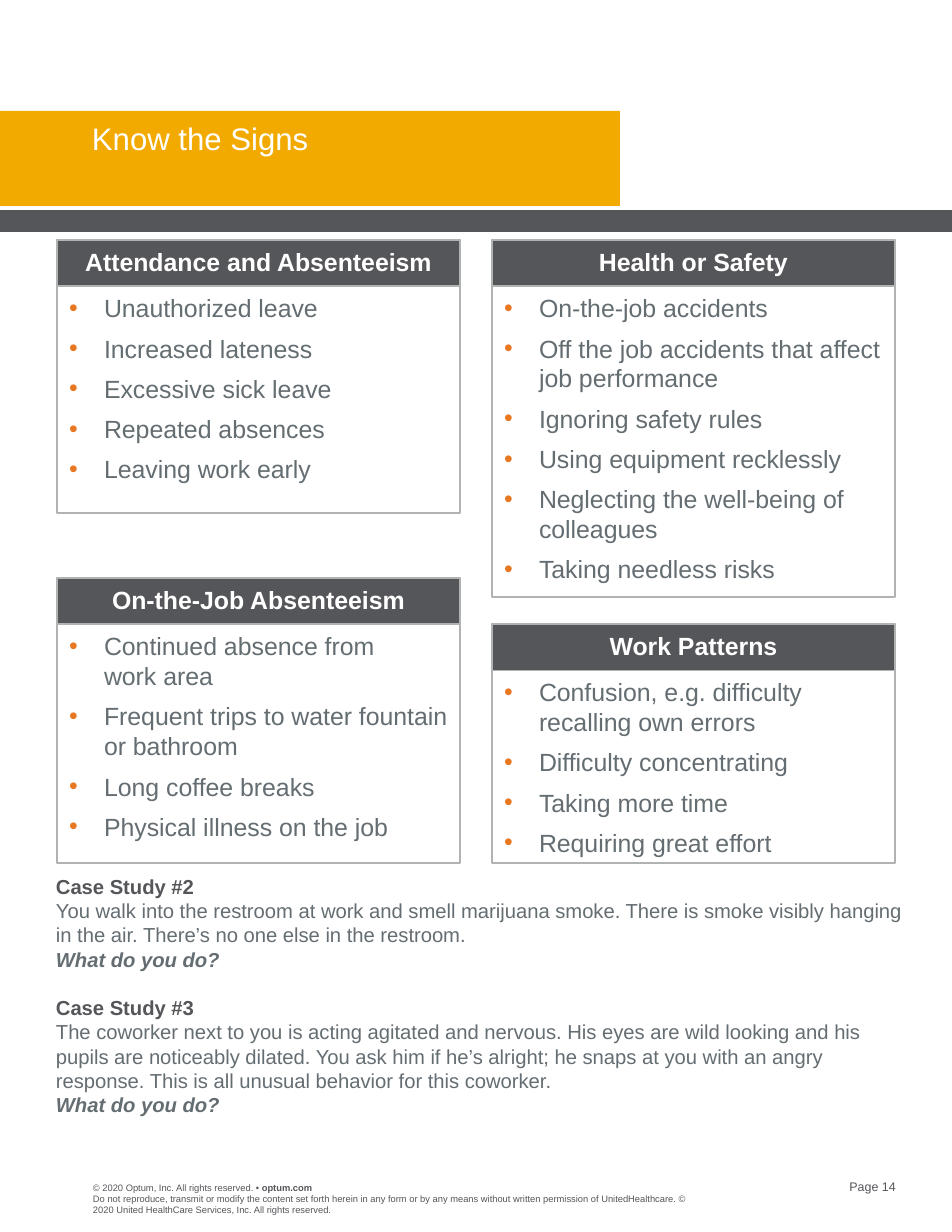
from dataclasses import dataclass
from typing import Optional

from lxml.etree import SubElement
from pptx import Presentation
from pptx.dml.color import RGBColor
from pptx.enum.shapes import MSO_SHAPE
from pptx.enum.text import MSO_ANCHOR, MSO_AUTO_SIZE, PP_ALIGN
from pptx.oxml.ns import qn
from pptx.util import Emu, Pt

SCALE = 914400 / 112


@dataclass(frozen=True)
class Theme:
    font: str = "Arial"
    gold: str = "F2AA00"
    dark: str = "55565A"
    text: str = "646D72"
    edge: str = "B1B3B3"
    dot: str = "E87722"
    white: str = "FFFFFF"
    title: int = 20
    card: int = 16
    case: int = 13
    page: int = 8
    note: int = 6


@dataclass(frozen=True)
class Box:
    x: int
    y: int
    w: int
    h: int


@dataclass(frozen=True)
class Card:
    box: Box
    bar: int
    head: str
    items: tuple[str, ...]


@dataclass(frozen=True)
class Case:
    head: str
    body: str


THEME = Theme()
LEFT, RIGHT, WIDE = 57, 492, 403
ASK = "What do you do?"

CARDS = (
    Card(Box(LEFT, 240, WIDE, 273), 46, "Attendance and Absenteeism", (
        "Unauthorized leave", "Increased lateness", "Excessive sick leave",
        "Repeated absences", "Leaving work early")),
    Card(Box(LEFT, 578, WIDE, 285), 46, "On-the-Job Absenteeism", (
        "Continued absence from\nwork area",
        "Frequent trips to water fountain or bathroom",
        "Long coffee breaks", "Physical illness on the job")),
    Card(Box(RIGHT, 240, WIDE, 357), 46, "Health or Safety", (
        "On-the-job accidents",
        "Off the job accidents that affect job performance",
        "Ignoring safety rules", "Using equipment recklessly",
        "Neglecting the well-being of colleagues", "Taking needless risks")),
    Card(Box(RIGHT, 624, WIDE, 239), 47, "Work Patterns", (
        "Confusion, e.g. difficulty recalling own errors",
        "Difficulty concentrating", "Taking more time",
        "Requiring great effort")),
)

CASES = (
    Case("Case Study #2",
         "You walk into the restroom at work and smell marijuana smoke. "
         "There is smoke visibly hanging in the air. "
         "There’s no one else in the restroom."),
    Case("Case Study #3",
         "The coworker next to you is acting agitated and nervous. "
         "His eyes are wild looking and his pupils are noticeably dilated. "
         "You ask him if he’s alright; he snaps at you with an angry response. "
         "This is all unusual behavior for this coworker."),
)


def px(n: int) -> Emu:
    return Emu(round(n * SCALE))


def place(box: Box) -> tuple[Emu, Emu, Emu, Emu]:
    return px(box.x), px(box.y), px(box.w), px(box.h)


def inset(frame, left: int = 0, top: int = 0, right: int = 0, base: int = 0) -> None:
    frame.word_wrap = True
    frame.margin_left, frame.margin_top = px(left), px(top)
    frame.margin_right, frame.margin_bottom = px(right), px(base)


def style(para, size: int, color: str, bold: bool = False, slant: bool = False) -> None:
    for run in para.runs:
        font = run.font
        font.name, font.size = THEME.font, Pt(size)
        font.bold, font.italic = bold, slant
        font.color.rgb = RGBColor.from_string(color)


def rect(slide, box: Box, fill: Optional[str] = None, line: float = 0):
    shape = slide.shapes.add_shape(MSO_SHAPE.RECTANGLE, *place(box))
    shape.shadow.inherit = False
    if fill:
        shape.fill.solid()
        shape.fill.fore_color.rgb = RGBColor.from_string(fill)
    else:
        shape.fill.background()
    if line:
        shape.line.color.rgb = RGBColor.from_string(THEME.edge)
        shape.line.width = Pt(line)
    else:
        shape.line.fill.background()
    return shape


def label(slide, box: Box, text: str, size: int, color: str):
    frame = slide.shapes.add_textbox(*place(box)).text_frame
    inset(frame)
    frame.text = text
    style(frame.paragraphs[0], size, color)
    return frame


def bullet(para) -> None:
    props = para._p.get_or_add_pPr()
    props.set("marL", str(px(35)))
    props.set("indent", str(-px(35)))
    color = SubElement(props, qn("a:buClr"))
    SubElement(color, qn("a:srgbClr")).set("val", THEME.dot)
    SubElement(props, qn("a:buFont")).set("typeface", THEME.font)
    SubElement(props, qn("a:buChar")).set("char", "•")


def card(slide, item: Card) -> None:
    box = item.box
    frame = rect(slide, box, line=1).text_frame
    inset(frame, 12, 53, 12)
    frame.vertical_anchor = MSO_ANCHOR.TOP
    for i, text in enumerate(item.items):
        para = frame.add_paragraph() if i else frame.paragraphs[0]
        para.text = text
        bullet(para)
        para.alignment = PP_ALIGN.LEFT
        para.space_after = Pt(6.7)
        style(para, THEME.card, THEME.text)
    head = rect(slide, Box(box.x, box.y, box.w, item.bar), THEME.dark, 0.75).text_frame
    inset(head, base=3)
    head.vertical_anchor = MSO_ANCHOR.MIDDLE
    head.text = item.head
    head.paragraphs[0].alignment = PP_ALIGN.CENTER
    style(head.paragraphs[0], THEME.card, THEME.white, bold=True)


def cases(slide, box: Box) -> None:
    frame = slide.shapes.add_textbox(*place(box)).text_frame
    inset(frame)
    for i, case in enumerate(CASES):
        head = frame.add_paragraph() if i else frame.paragraphs[0]
        head.text = case.head
        if i:
            head.space_before = Pt(15.6)
        style(head, THEME.case, THEME.dark, bold=True)
        body = frame.add_paragraph()
        body.text = case.body
        style(body, THEME.case, THEME.text)
        ask = frame.add_paragraph()
        ask.text = ASK
        style(ask, THEME.case, THEME.text, bold=True, slant=True)


def title(slide, box: Box, text: str) -> None:
    shape = slide.shapes.title
    shape.left, shape.top, shape.width, shape.height = place(box)
    frame = shape.text_frame
    inset(frame)
    frame.auto_size = MSO_AUTO_SIZE.NONE
    frame.vertical_anchor = MSO_ANCHOR.TOP
    frame.text = text
    para = frame.paragraphs[0]
    para.alignment = PP_ALIGN.LEFT
    para.line_spacing = 0.9
    style(para, THEME.title, THEME.white)


def footer(slide) -> None:
    para = label(slide, Box(93, 1182, 224, 11),
                 "© 2020 Optum, Inc. All rights reserved. • ",
                 THEME.note, THEME.dark).paragraphs[0]
    site = para.add_run()
    site.text = "optum.com"
    style(para, THEME.note, THEME.dark)
    site.font.bold = True
    label(slide, Box(93, 1193, 594, 22),
          "Do not reproduce, transmit or modify the content set forth herein in any "
          "form or by any means without written permission of UnitedHealthcare. "
          "© 2020 United HealthCare Services, Inc. All rights reserved.",
          THEME.note, THEME.dark)
    page = label(slide, Box(805, 1179, 91, 15), "Page 14", THEME.page, THEME.dark)
    page.paragraphs[0].alignment = PP_ALIGN.RIGHT


def main() -> None:
    deck = Presentation()
    deck.slide_width, deck.slide_height = px(952), px(1232)
    slide = deck.slides.add_slide(deck.slide_layouts[5])
    rect(slide, Box(0, 111, 620, 95), THEME.gold)
    rect(slide, Box(0, 210, 952, 22), THEME.dark)
    for item in CARDS:
        card(slide, item)
    cases(slide, Box(56, 874, 857, 253))
    footer(slide)
    title(slide, Box(92, 124, 504, 34), "Know the Signs")
    tree = slide.shapes._spTree
    tree.append(slide.shapes.title._element)
    deck.save("out.pptx")


if __name__ == "__main__":
    main()
